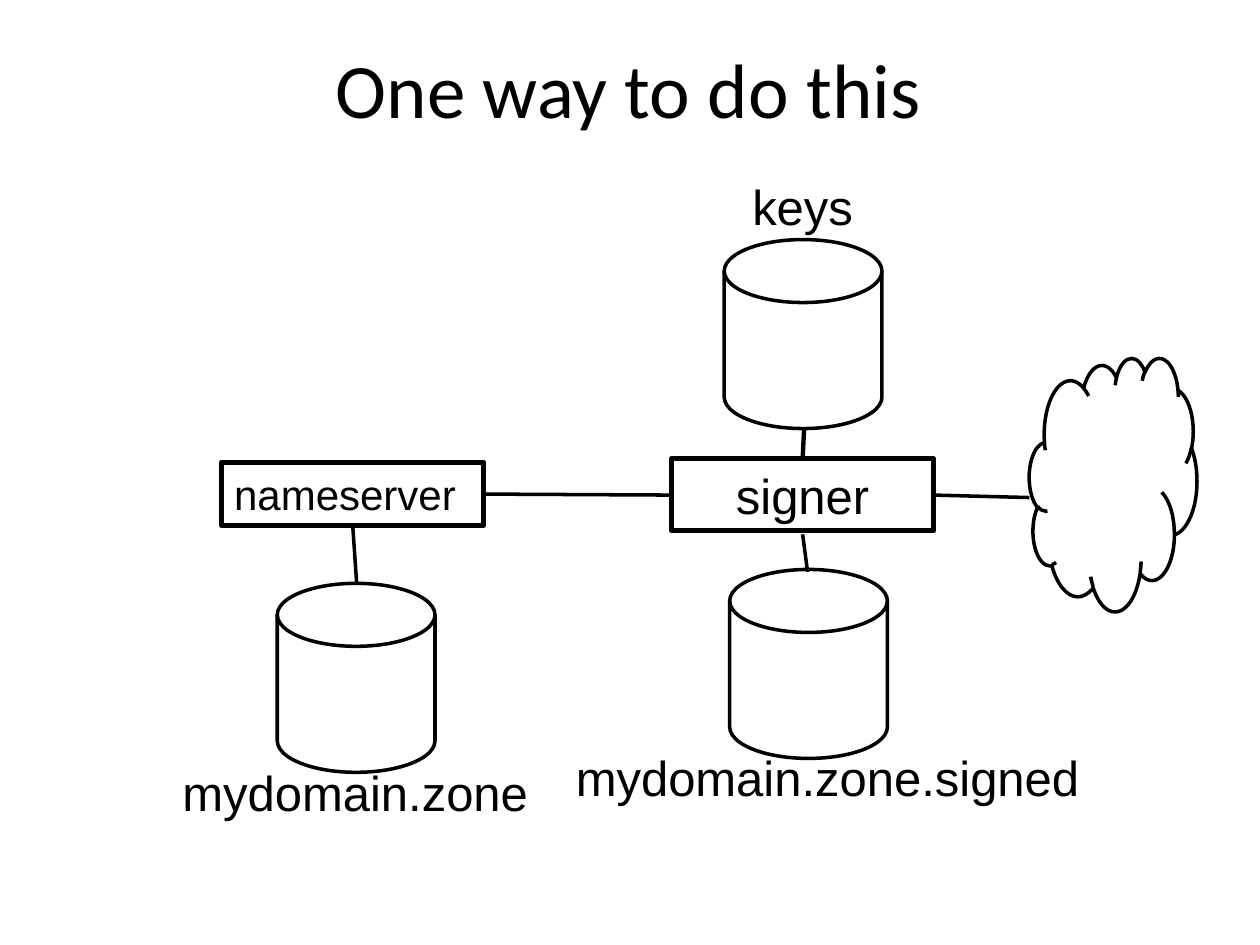
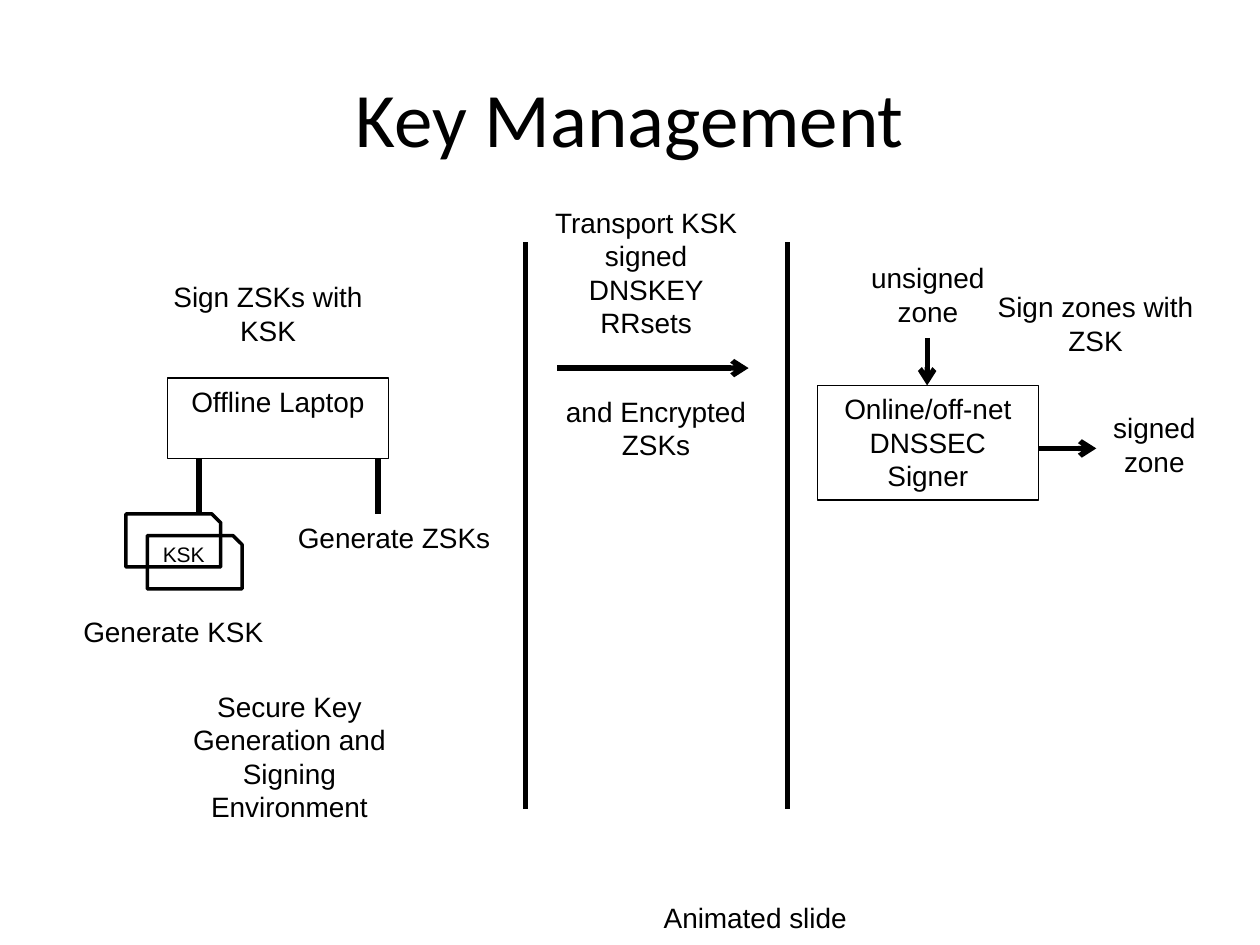
"""Build two slides on DNSSEC zone signing and key management."""
from lxml import etree
from pptx import Presentation
from pptx.dml.color import RGBColor
from pptx.enum import shapes, text
from pptx.oxml import ns
from pptx.util import Cm, Pt

BLACK = RGBColor(0, 0, 0)
RECT = shapes.MSO_SHAPE.RECTANGLE
DISK = shapes.MSO_SHAPE.FLOWCHART_MAGNETIC_DISK
CLOUD = shapes.MSO_SHAPE.CLOUD
CARD = shapes.MSO_SHAPE.SNIP_1_RECTANGLE
CENTER = text.PP_ALIGN.CENTER
LEFT = text.PP_ALIGN.LEFT


def add_item(s, box, label="", size=16, kind=None, width=2, align=CENTER):
    """Add an outlined shape, or a text box when no kind is given."""
    box = [Cm(v) for v in box]
    if kind is None:
        sp = s.shapes.add_textbox(*box)
    else:
        sp = s.shapes.add_shape(kind, *box)
        sp.shadow.inherit = False
        sp.fill.background()
        sp.line.color.rgb = BLACK
        sp.line.width = Pt(width)
    if label:
        tf = sp.text_frame
        tf.word_wrap = True
        tf.vertical_anchor = text.MSO_ANCHOR.TOP
        for i, words in enumerate(label.split("\n")):
            p = tf.add_paragraph() if i else tf.paragraphs[0]
            p.alignment = align
            r = p.add_run()
            r.text = words
            r.font.name = "Arial"
            r.font.size = Pt(size)
            r.font.color.rgb = BLACK


def add_line(s, x1, y1, x2, y2, width, arrow=False):
    """Add a straight black line, with an arrowhead at its end if asked."""
    cx = s.shapes.add_connector(shapes.MSO_CONNECTOR.STRAIGHT, Cm(x1), Cm(y1), Cm(x2), Cm(y2))
    cx.line.color.rgb = BLACK
    cx.line.width = Pt(width)
    if arrow:
        etree.SubElement(cx.line._get_or_add_ln(), ns.qn("a:tailEnd"), type="arrow")
    etree.SubElement(cx._element.spPr, ns.qn("a:effectLst"))


prs = Presentation()
prs.slide_width, prs.slide_height = Cm(25.4), Cm(19.05)

slides = []
for title, left, top in [("One way to do this", 1.24, 0.18), ("Key Management", 1.27, 0.76)]:
    s = prs.slides.add_slide(prs.slide_layouts[5])
    sp = s.shapes.title
    sp.left, sp.top, sp.width, sp.height = Cm(left), Cm(top), Cm(22.86), Cm(3.18)
    tf = sp.text_frame
    tf.vertical_anchor = text.MSO_ANCHOR.MIDDLE
    p = tf.paragraphs[0]
    p.alignment = CENTER
    r = p.add_run()
    r.text = title
    r.font.name = "Calibri"
    r.font.size = Pt(44)
    r.font.color.rgb = BLACK
    slides.append(s)
signing, management = slides

add_item(signing, (4.47, 9.32, 5.28, 1.27), "nameserver", 24, RECT, 3, LEFT)
add_item(signing, (13.54, 9.25, 5.28, 1.45), "signer", 28, RECT, 3)
for left, top in [(5.59, 11.76), (14.71, 11.48), (14.6, 4.83)]:
    add_item(signing, (left, top, 3.18, 3.81), kind=DISK)
for label, left, top, width in [
    ("mydomain.zone", 3.35, 15.24, 7.62),
    ("mydomain.zone.signed", 11.28, 14.94, 10.8),
    ("keys", 12.37, 3.43, 7.62),
]:
    add_item(signing, (left, top, width, 1.45), label, 28)
add_item(signing, (20.75, 7.21, 3.38, 5.11), kind=CLOUD)
for link in [
    (9.78, 9.96, 13.54, 9.98, 2),
    (18.82, 9.98, 20.75, 10.03, 2),
    (16.21, 8.64, 16.18, 9.25, 2.5),
    (16.18, 10.77, 16.28, 11.53, 2),
    (7.11, 10.59, 7.19, 11.76, 2),
]:
    add_line(signing, *link)

add_item(management, (3.38, 7.62, 4.45, 1.63), "Offline Laptop", kind=RECT, width=0.75)
add_item(management, (16.48, 7.77, 4.45, 2.31), "Online/off-net DNSSEC Signer", kind=RECT, width=0.75)
for label, *box in [
    ("and Encrypted ZSKs", 11, 7.82, 4.45, 1.63),
    ("Sign ZSKs with KSK", 3.18, 5.51, 4.45, 1.63),
    ("Transport KSK signed DNSKEY RRsets", 10.8, 4.01, 4.45, 3),
    ("Sign zones with ZSK", 19.86, 5.72, 4.45, 1.63),
    ("signed\nzone", 22.1, 8.15, 2.34, 1.63),
    ("unsigned\nzone", 17.22, 5.13, 2.97, 1.63),
    ("Secure Key Generation and Signing Environment", 3.61, 13.77, 4.45, 3),
    ("Generate KSK", 1.27, 12.27, 4.45, 0.94),
    ("Generate ZSKs", 5.72, 10.36, 4.45, 0.94),
]:
    add_item(management, box, label)
add_item(management, (2.97, 10.8, 1.47, 0.76), "KSK", 12)
for left, top in [(2.54, 10.36), (2.97, 10.8)]:
    add_item(management, (left, top, 1.91, 1.07), kind=CARD)
for x in (10.59, 15.88):
    add_line(management, x, 4.88, x, 16.31, 3)
for x in (4.01, 7.62):
    add_line(management, x, 9.25, x, 10.36, 3)
for arrow in [(18.69, 6.81, 18.69, 7.77), (20.93, 9.04, 22.1, 9.04), (11.23, 7.42, 15.09, 7.42)]:
    add_line(management, *arrow, 3, arrow=True)
add_item(management, (13.13, 18.03, 4.24, 0.94), "Animated slide", align=LEFT)

prs.save("out.pptx")
